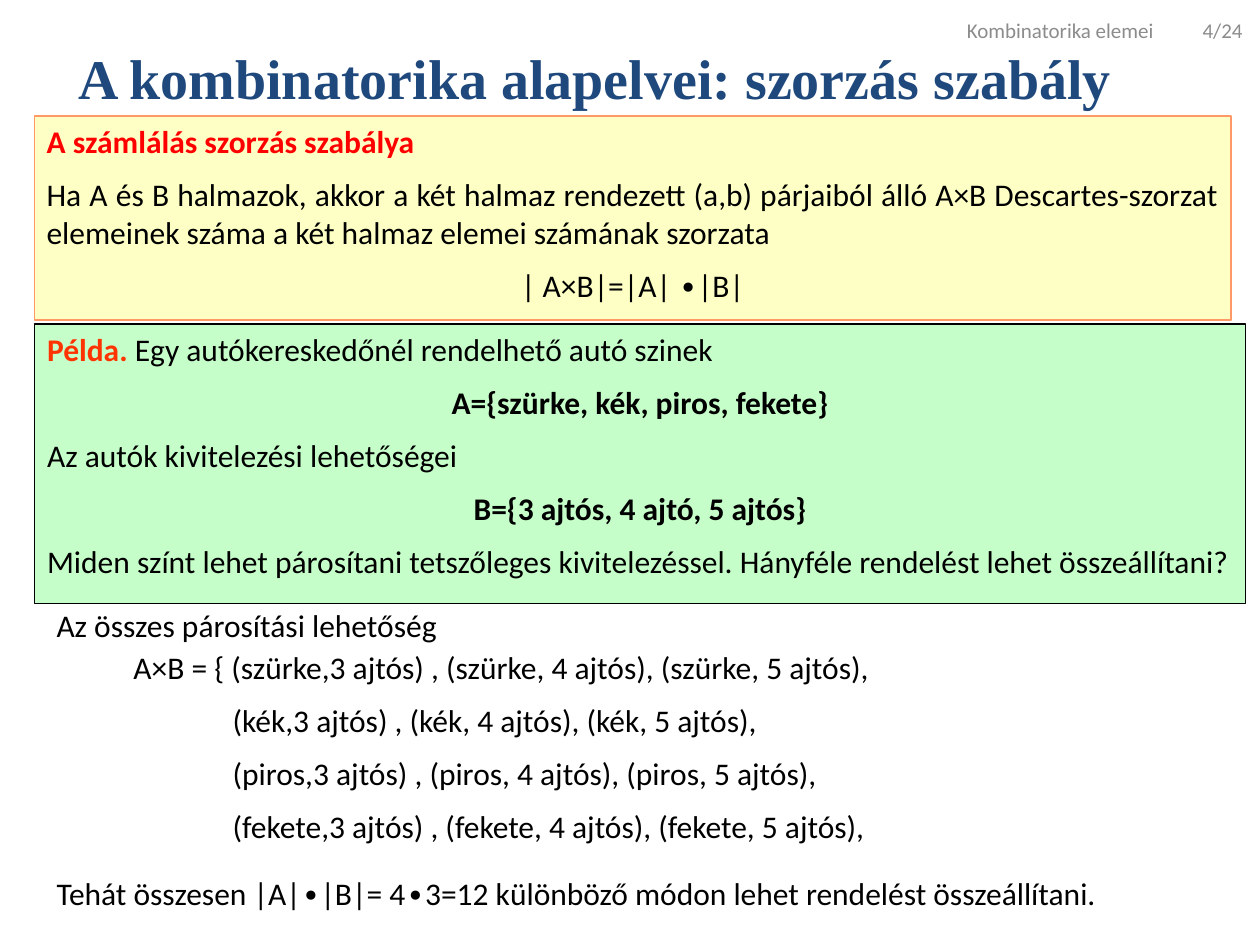
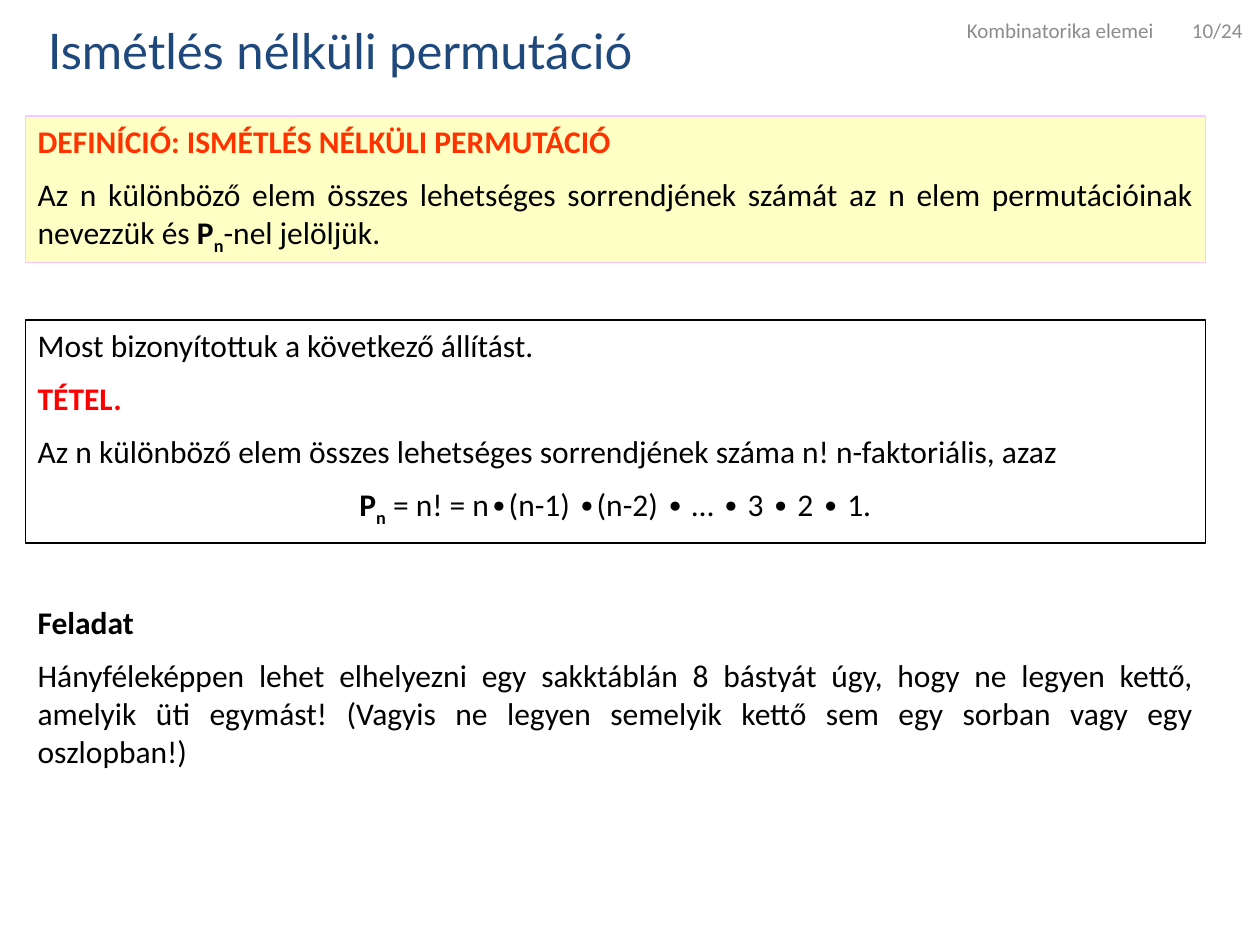
from dataclasses import dataclass

from lxml.etree import SubElement
from pptx import Presentation
from pptx.dml.color import RGBColor
from pptx.enum.shapes import MSO_SHAPE
from pptx.enum.text import MSO_ANCHOR, MSO_AUTO_SIZE, PP_ALIGN
from pptx.oxml.ns import qn
from pptx.util import Cm, Pt

LEFT, CENTER, JUSTIFY = PP_ALIGN.LEFT, PP_ALIGN.CENTER, PP_ALIGN.JUSTIFY


@dataclass(frozen=True)
class Theme:
    title: str = "1F497D"
    text: str = "000000"
    red: str = "FF0000"
    orange: str = "FF3300"
    muted: str = "8C8C8C"
    yellow: str = "FEFFC5"
    green: str = "C6FECA"
    peach_line: str = "FF9966"
    pink_line: str = "FDC6FE"
    black_line: str = "000000"
    font: str = "Calibri"
    body_size: float = 18
    header_size: float = 12
    paragraph_gap: float = 8.7
    line_width: float = 0.75


THEME = Theme()


@dataclass(frozen=True)
class Span:
    text: str
    color: str = THEME.text
    bold: bool = False
    sub: bool = False


@dataclass(frozen=True)
class Para:
    spans: tuple
    align: PP_ALIGN = LEFT
    indent: float = 0


def para(*spans, align=LEFT, indent=0):
    spans = tuple(Span(s) if isinstance(s, str) else s for s in spans)
    return Para(spans, align, indent)


class Deck:
    def __init__(self, theme):
        self.theme = theme
        self.prs = Presentation()
        self.prs.slide_width, self.prs.slide_height = Cm(25.4), Cm(19.05)
        self.slide = None

    def add_slide(self):
        self.slide = self.prs.slides.add_slide(self.prs.slide_layouts[5])

    def style(self, r, size, color, font=None, bold=False):
        r.font.name = font or self.theme.font
        r.font.size = Pt(size)
        r.font.bold = bold
        r.font.color.rgb = RGBColor.from_string(color)

    def title(self, text, box, font, size, bold=False):
        sp = self.slide.shapes.title
        sp.left, sp.top, sp.width, sp.height = map(Cm, box)
        tf = sp.text_frame
        tf.text = text
        tf.auto_size = MSO_AUTO_SIZE.NONE
        tf.vertical_anchor = MSO_ANCHOR.MIDDLE
        tf.margin_top = tf.margin_bottom = 0
        p = tf.paragraphs[0]
        p.alignment = LEFT
        self.style(p.runs[0], size, self.theme.title, font, bold)

    def header(self, number):
        sp = self.slide.shapes.add_textbox(Cm(18.19), Cm(0.1), Cm(7.14), Cm(1.02))
        tf = sp.text_frame
        tf.word_wrap = True
        tf.vertical_anchor = MSO_ANCHOR.MIDDLE
        tf.margin_left, tf.margin_right = Cm(1.3), 0
        tf.text = f"Kombinatorika elemei\t{number}/24"
        p = tf.paragraphs[0]
        tabs = SubElement(p._p.get_or_add_pPr(), qn("a:tabLst"))
        SubElement(tabs, qn("a:tab"), pos=str(Cm(5.56)), algn="r")
        for r in p.runs:
            self.style(r, self.theme.header_size, self.theme.muted)

    def fill_text(self, sp, paras):
        tf = sp.text_frame
        tf.word_wrap = True
        tf.vertical_anchor = MSO_ANCHOR.TOP
        for i, item in enumerate(paras):
            p = tf.add_paragraph() if i else tf.paragraphs[0]
            p.alignment = item.align
            p.space_before = Pt(self.theme.paragraph_gap if i else 0)
            if item.indent:
                p._p.get_or_add_pPr().set("marL", str(Cm(item.indent)))
            for span in item.spans:
                r = p.add_run()
                r.text = span.text
                self.style(r, self.theme.body_size, span.color, bold=span.bold)
                if span.sub:
                    r._r.get_or_add_rPr().set("baseline", "-25000")

    def text(self, box, *paras):
        self.fill_text(self.slide.shapes.add_textbox(*map(Cm, box)), paras)

    def panel(self, box, line, *paras, fill=None):
        sp = self.slide.shapes.add_shape(MSO_SHAPE.RECTANGLE, *map(Cm, box))
        sp.shadow.inherit = False
        if fill:
            sp.fill.solid()
            sp.fill.fore_color.rgb = RGBColor.from_string(fill)
        else:
            sp.fill.background()
        sp.line.color.rgb = RGBColor.from_string(line)
        sp.line.width = Pt(self.theme.line_width)
        self.fill_text(sp, paras)


def product_rule(deck):
    t = deck.theme
    deck.add_slide()
    deck.title("A kombinatorika alapelvei: szorzás szabály",
               (1.32, 0.8, 21.51, 1.5), "Times New Roman", 32, bold=True)
    deck.panel(
        (0.69, 2.34, 24.13, 4.11), t.peach_line,
        para(Span("A számlálás szorzás szabálya", t.red, True)),
        para("Ha A és B halmazok, akkor a két halmaz rendezett (a,b) párjaiból álló "
             "A×B Descartes-szorzat elemeinek száma a két halmaz elemei számának szorzata",
             align=JUSTIFY),
        para("| A×B|=|A| ∙|B|", align=CENTER),
        fill=t.yellow)

    colors = ("kék", "piros", "fekete")
    pairs = [para(f"({c},3 ajtós) , ({c}, 4 ajtós), ({c}, 5 ajtós),", indent=2.13)
             for c in colors]
    deck.text(
        (2.31, 12.93, 21.79, 4.5),
        para("A×B = { (szürke,3 ajtós) , (szürke, 4 ajtós), (szürke, 5 ajtós),", indent=0.13),
        *pairs)
    deck.text((0.89, 12.09, 11.99, 1.02), para("Az összes párosítási lehetőség"))
    deck.panel(
        (0.7, 6.53, 24.41, 5.64), t.black_line,
        para(Span("Példa.", t.orange, True), " Egy autókereskedőnél rendelhető autó szinek",
             align=JUSTIFY),
        para(Span("A={szürke, kék, piros, fekete}", bold=True), align=CENTER),
        para("Az autók kivitelezési lehetőségei", align=JUSTIFY),
        para(Span("B={3 ajtós, 4 ajtó, 5 ajtós}", bold=True), align=CENTER),
        para("Miden színt lehet párosítani tetszőleges kivitelezéssel. "
             "Hányféle rendelést lehet összeállítani?", align=JUSTIFY),
        fill=t.green)
    deck.text(
        (0.89, 17.5, 23.19, 1.02),
        para("Tehát összesen |A|∙|B|= 4∙3=12 különböző módon lehet rendelést összeállítani."))
    deck.header(4)


def permutation(deck):
    t = deck.theme
    left, width = 0.51, 23.8
    p_n = (Span("P", bold=True), Span("n", bold=True, sub=True))
    deck.add_slide()
    deck.title("Ismétlés nélküli permutáció", (0.71, 0.13, 21.13, 1.75), "Lato", 28)
    deck.panel(
        (left, 2.34, width, 2.95), t.pink_line,
        para(Span("DEFINÍCIÓ: ISMÉTLÉS NÉLKÜLI PERMUTÁCIÓ", t.orange, True), align=JUSTIFY),
        para("Az n különböző elem összes lehetséges sorrendjének számát "
             "az n elem permutációinak nevezzük és ", *p_n, "-nel jelöljük.", align=JUSTIFY),
        fill=t.yellow)
    deck.panel(
        (left, 6.45, width, 4.5), t.black_line,
        para("Most bizonyítottuk a következő állítást."),
        para(Span("TÉTEL.", t.red, True)),
        para("Az n különböző elem összes lehetséges sorrendjének száma n! n-faktoriális, azaz",
             align=JUSTIFY),
        para(*p_n, " = n! = n∙(n-1) ∙(n-2) ∙ … ∙ 3 ∙ 2 ∙ 1.", align=CENTER))
    deck.text(
        (left, 12.04, width, 3.68),
        para(Span("Feladat", bold=True)),
        para("Hányféleképpen lehet elhelyezni egy sakktáblán 8 bástyát úgy, hogy ne legyen "
             "kettő, amelyik üti egymást! (Vagyis ne legyen semelyik kettő sem egy sorban "
             "vagy egy oszlopban!)", align=JUSTIFY))
    deck.header(10)


def main():
    deck = Deck(THEME)
    product_rule(deck)
    permutation(deck)
    deck.prs.save("out.pptx")


if __name__ == "__main__":
    main()
